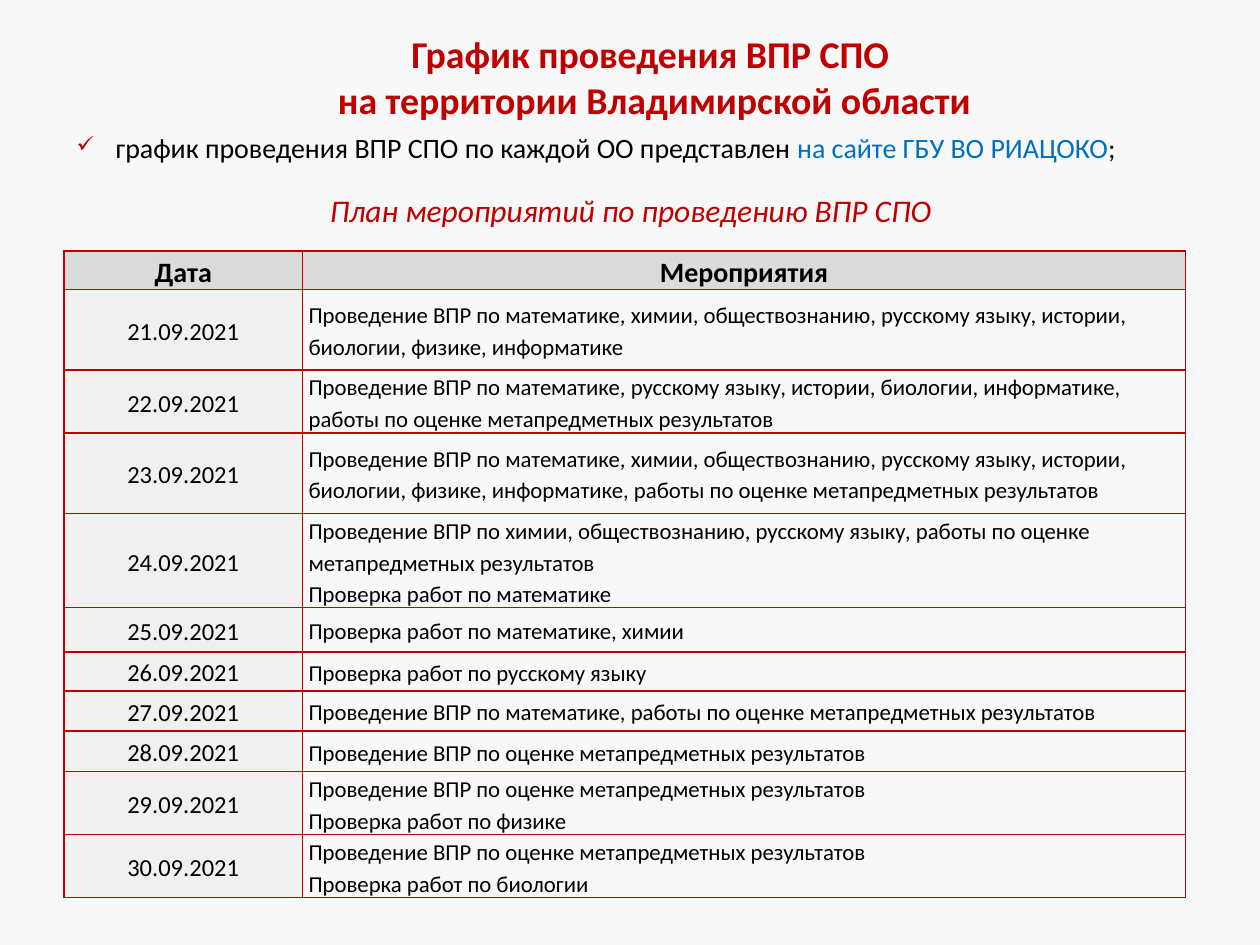
from lxml import etree
from pptx import Presentation
from pptx.dml.color import RGBColor
from pptx.enum.text import MSO_ANCHOR, PP_ALIGN
from pptx.oxml.ns import qn
from pptx.util import Inches, Pt

MIDDLE = MSO_ANCHOR.MIDDLE
TOP = MSO_ANCHOR.TOP
CENTER = PP_ALIGN.CENTER
LEFT = PP_ALIGN.LEFT

RED, BLACK, BLUE = "C00000", "000000", "0070C0"
HEADER_FILL, DATE_FILL, BACKGROUND = "DBDBDB", "F0F0F0", "F8F8F8"

META = "работы по оценке метапредметных результатов"
META_HELD = "Проведение ВПР по оценке метапредметных результатов"
SCHEDULE = [
    ("21.09.2021", 0.64, ["Проведение ВПР по математике, химии, обществознанию, русскому языку, "
                          "истории, биологии, физике, информатике"]),
    ("22.09.2021", 0.48, ["Проведение ВПР по математике, русскому языку, истории, биологии, "
                          f"информатике, {META}"]),
    ("23.09.2021", 0.64, ["Проведение ВПР по математике, химии, обществознанию, русскому языку, "
                          f"истории, биологии, физике, информатике, {META}"]),
    ("24.09.2021", 0.55, [f"Проведение ВПР по химии, обществознанию, русскому языку, {META}",
                          "Проверка работ по математике"]),
    ("25.09.2021", 0.35, ["Проверка работ по математике, химии"]),
    ("26.09.2021", 0.31, ["Проверка работ по русскому языку"]),
    ("27.09.2021", 0.32, [f"Проведение ВПР по математике, {META}"]),
    ("28.09.2021", 0.32, [META_HELD]),
    ("29.09.2021", 0.5, [META_HELD, "Проверка работ по физике"]),
    ("30.09.2021", 0.5, [META_HELD, "Проверка работ по биологии"]),
]


def color(value):
    return RGBColor.from_string(value)


def add_node(parent, tag, **attributes):
    return etree.SubElement(parent, qn(tag), attributes)


def apply(target, values):
    for name, value in values.items():
        setattr(target, name, value)


class SlideBuilder:
    font_name = "Calibri"
    cell_format = {"vertical_anchor": MIDDLE, "margin_left": Inches(0.05),
                   "margin_right": Inches(0.05), "margin_top": 0, "margin_bottom": 0}

    def __init__(self, slide):
        self.slide = slide
        fill = slide.background.fill
        fill.solid()
        fill.fore_color.rgb = color(BACKGROUND)

    def span(self, para, text, size, ink=BLACK, **style):
        span = para.add_run()
        span.text = text
        apply(span.font, {"name": self.font_name, "size": Pt(size), **style})
        span.font.color.rgb = color(ink)

    def text_box(self, left, top, width, height, wrap=True, anchor=TOP, align=LEFT):
        box = self.slide.shapes.add_textbox(*map(Inches, (left, top, width, height)))
        apply(box.text_frame, {"word_wrap": wrap, "vertical_anchor": anchor})
        para = box.text_frame.paragraphs[0]
        para.alignment = align
        return para

    def bullet(self, para, symbol, ink, percent, indent):
        properties = para._p.get_or_add_pPr()
        properties.set("marL", str(Inches(indent)))
        properties.set("indent", str(-Inches(indent)))
        add_node(add_node(properties, "a:buClr"), "a:srgbClr", val=ink)
        add_node(properties, "a:buSzPct", val=str(percent * 1000))
        add_node(properties, "a:buChar", char=symbol)

    def borders(self, cell, ink, width):
        properties = cell._tc.get_or_add_tcPr()
        for side in ("L", "R", "T", "B"):
            line = add_node(properties, f"a:ln{side}", w=str(Pt(width)))
            add_node(add_node(line, "a:solidFill"), "a:srgbClr", val=ink)

    def cell(self, cell, lines, size, align=LEFT, fill=None, bold=False):
        apply(cell, self.cell_format)
        self.borders(cell, RED, 1)
        if fill:
            cell.fill.solid()
            cell.fill.fore_color.rgb = color(fill)
        else:
            cell.fill.background()
        frame = cell.text_frame
        for index, line in enumerate(lines):
            para = frame.add_paragraph() if index else frame.paragraphs[0]
            apply(para, {"alignment": align, "line_spacing": 1.15})
            self.span(para, line, size, bold=bold)

    def schedule_table(self, left, top, widths, header_height, schedule):
        heights = [header_height] + [height for _, height, _ in schedule]
        table = self.slide.shapes.add_table(
            len(heights), len(widths), Inches(left), Inches(top),
            Inches(sum(widths)), Inches(sum(heights))).table
        apply(table, {"first_row": False, "horz_banding": False})
        for column, width in zip(table.columns, widths):
            column.width = Inches(width)
        for row, height in zip(table.rows, heights):
            row.height = Inches(height)
        for index, heading in enumerate(("Дата", "Мероприятия")):
            self.cell(table.cell(0, index), [heading], 16, CENTER, HEADER_FILL, True)
        for index, (date, _, events) in enumerate(schedule, 1):
            self.cell(table.cell(index, 0), [date], 14, CENTER, DATE_FILL)
            self.cell(table.cell(index, 1), events, 13)


def main():
    deck = Presentation()
    apply(deck, {"slide_width": Inches(10), "slide_height": Inches(7.5)})
    page = SlideBuilder(deck.slides.add_slide(deck.slide_layouts[6]))

    title = page.text_box(1.14, 0.21, 8.11, 0.79, anchor=MIDDLE, align=CENTER)
    page.span(title, "График проведения ВПР СПО ", 21.6, RED, bold=True)
    title.add_line_break()
    page.span(title, "на территории Владимирской области", 21.6, RED, bold=True)

    page.schedule_table(0.51, 1.99, [1.89, 7.01], 0.26, SCHEDULE)

    notice = page.text_box(0.51, 0.99, 9.06, 0.37)
    page.bullet(notice, "✓", RED, 80, 0.31)
    page.span(notice, "график проведения ВПР СПО по каждой ОО представлен ", 16)
    page.span(notice, "на сайте ГБУ ВО РИАЦОКО", 16, BLUE)
    page.span(notice, ";", 16)

    subtitle = page.text_box(2.52, 1.47, 5.03, 0.4, wrap=False)
    page.span(subtitle, "План мероприятий по проведению ВПР СПО", 18, RED, italic=True)

    deck.save("out.pptx")


if __name__ == "__main__":
    main()
